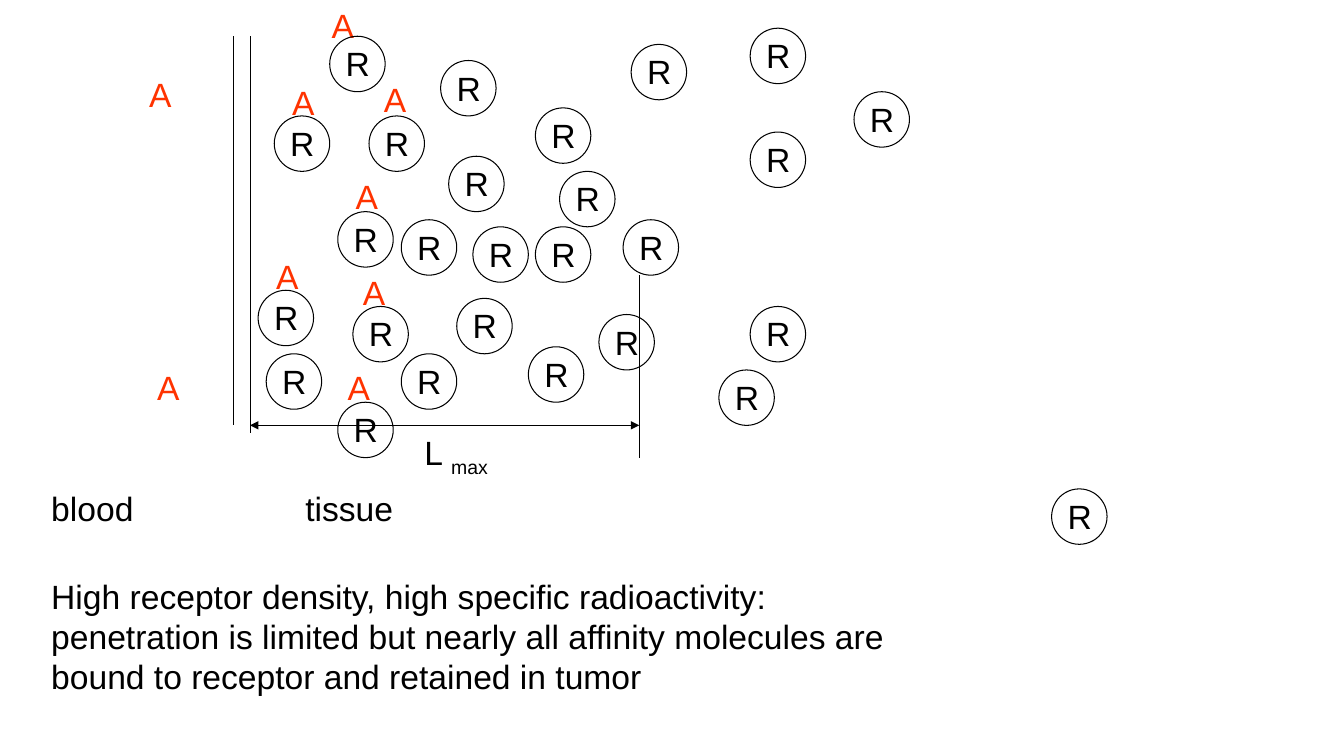
from pptx import Presentation
from pptx import util as u
from pptx.dml.color import RGBColor
from pptx.enum import shapes, text
from pptx.oxml.ns import qn
from lxml import etree
from dataclasses import dataclass


@dataclass(frozen=True)
class Theme:
    """Colours, font and type sizes of the slide."""
    ink: str = "000000"
    agent: str = "FF3300"
    font: str = "Arial"
    size: int = 24
    rule: float = 0.75


THEME = Theme()
SCALE = 9144
DISC = 55
AGENTS = [(138, 68), (319, 0), (343, 170), (350, 265), (264, 249),
          (146, 359), (280, 76), (371, 73), (335, 359)]
CELLS = [(594, 312), (453, 296), (335, 399), (256, 288), (272, 115),
         (531, 225), (335, 210), (437, 60), (555, 170), (626, 44),
         (744, 131), (744, 28), (847, 91), (366, 115), (264, 351),
         (350, 304), (445, 155), (398, 351), (531, 107), (713, 367),
         (524, 344), (327, 36), (1043, 485), (744, 304), (469, 225),
         (618, 218), (398, 218)]


def px(*nums):
    """Turn px lengths into EMU."""
    return [u.Emu(n * SCALE) for n in nums]


def style(item, **vals):
    """Set each given attribute on an item."""
    for name, val in vals.items():
        setattr(item, name, val)


def label(host, box, paras, color=THEME.ink, wrap=False):
    """Add a text box; each paragraph is a list of (words, baseline) runs."""
    frame = host.add_textbox(*px(*box)).text_frame
    style(frame, word_wrap=wrap, auto_size=text.MSO_AUTO_SIZE.SHAPE_TO_FIT_TEXT)
    for i, runs in enumerate(paras):
        para = frame.add_paragraph() if i else frame.paragraphs[0]
        for words, base in runs:
            run = para.add_run()
            run.text = words
            style(run.font, name=THEME.font, size=u.Pt(THEME.size))
            run.font.color.rgb = RGBColor.from_string(color)
            if base:
                run.font._element.set("baseline", str(base * 1000))


def stroke(line):
    """Give a line the thin ink stroke."""
    line.color.rgb = RGBColor.from_string(THEME.ink)
    line.width = u.Pt(THEME.rule)


def rule(host, ends, arrow=False):
    """Draw a straight line, with arrowheads at both ends on request."""
    line = host.add_connector(shapes.MSO_CONNECTOR.STRAIGHT, *px(*ends))
    stroke(line.line)
    props = line._element.spPr
    if arrow:
        for tag in ("a:headEnd", "a:tailEnd"):
            etree.SubElement(props.find(qn("a:ln")), qn(tag), type="triangle")
    etree.SubElement(props, qn("a:effectLst"))


def cell(host, left, top):
    """Draw a receptor: a letter R grouped with its ring."""
    group = host.add_group_shape().shapes
    label(group, (left + 6, top + 2, 44, 50), [[("R", 0)]])
    ring = group.add_shape(shapes.MSO_SHAPE.OVAL, *px(left, top, DISC, DISC))
    ring.shadow.inherit = False
    ring.fill.background()
    stroke(ring.line)


def main():
    """Build the slide and save it."""
    deck = Presentation()
    wide, high = px(1333, 750)
    style(deck, slide_width=wide, slide_height=high)
    host = deck.slides.add_slide(deck.slide_layouts[6]).shapes

    rule(host, (232, 36, 232, 422))
    rule(host, (248, 36, 248, 430))
    label(host, (41, 479, 102, 50), [[("blood", 0)]])
    label(host, (293, 479, 107, 50), [[("tissue", 0)]])
    for left, top in AGENTS:
        label(host, (left, top, 42, 50), [[("A", 0)]], THEME.agent)
    rule(host, (634, 273, 634, 454))
    rule(host, (248, 422, 634, 422), arrow=True)
    label(host, (411, 424, 90, 50), [[("L ", 0), ("max", -25)]])
    for spot in CELLS:
        cell(host, *spot)
    label(host, (41, 566, 923, 130), [
        [("High receptor density, high specific radioactivity:", 0)],
        [("penetration is limited but nearly all affinity molecules are "
          "bound to receptor and retained in tumor", 0)]], wrap=True)
    deck.save("out.pptx")


if __name__ == "__main__":
    main()
